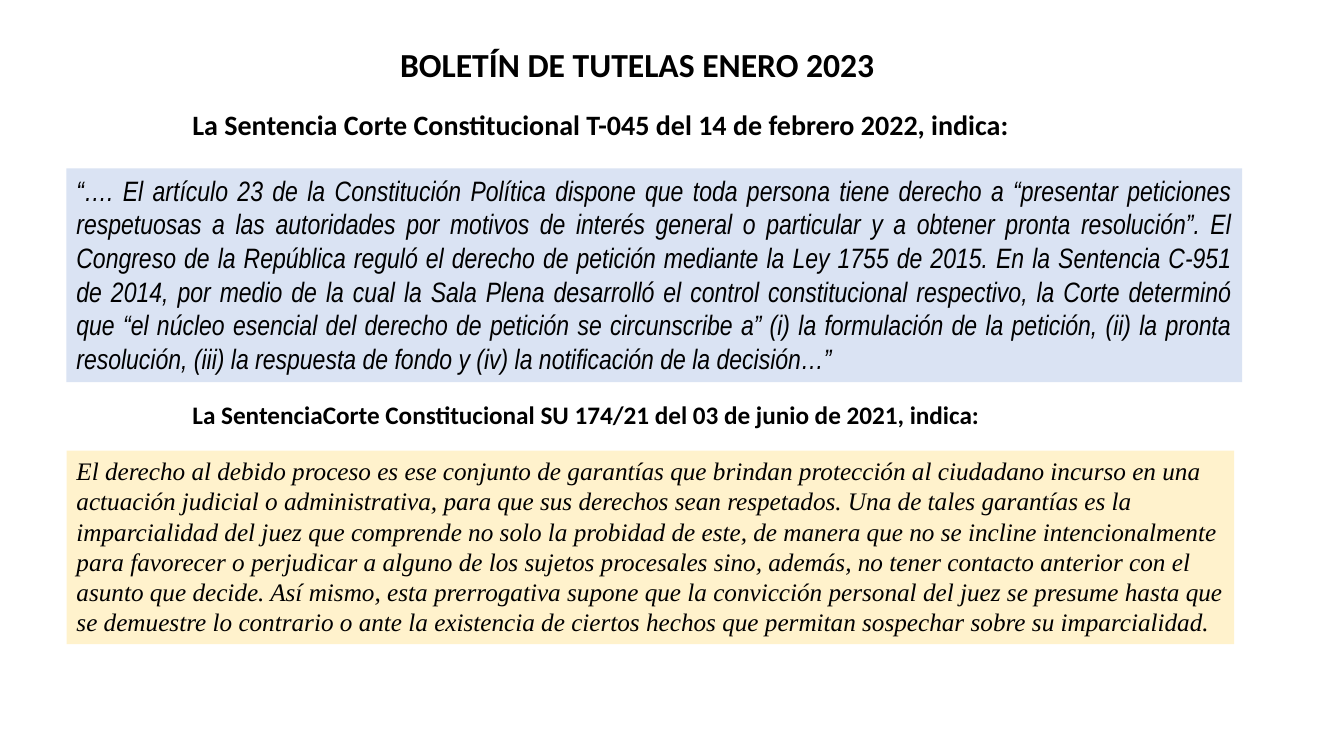
from pptx import Presentation
from pptx.dml.color import RGBColor
from pptx.enum.shapes import MSO_SHAPE
from pptx.enum.text import MSO_ANCHOR, MSO_AUTO_SIZE, PP_ALIGN
from pptx.util import Inches, Pt

PETITION_QUOTE = (
    "“…. El artículo 23 de la Constitución Política dispone que toda persona tiene derecho a "
    "“presentar peticiones respetuosas a las autoridades por motivos de interés general o "
    "particular y a obtener pronta resolución”. El Congreso de la República reguló el derecho "
    "de petición mediante la Ley 1755 de 2015. En la Sentencia C-951 de 2014, por medio de la "
    "cual la Sala Plena desarrolló el control constitucional respectivo, la Corte determinó que "
    "“el núcleo esencial del derecho de petición se circunscribe a” (i) la formulación de la "
    "petición, (ii) la pronta resolución, (iii) la respuesta de fondo y (iv) la notificación de "
    "la decisión…”"
)
DUE_PROCESS_QUOTE = (
    "El derecho al debido proceso es ese conjunto de garantías que brindan protección al "
    "ciudadano incurso en una actuación judicial o administrativa, para que sus derechos sean "
    "respetados. Una de tales garantías es la imparcialidad del juez que comprende no solo la "
    "probidad de este, de manera que no se incline intencionalmente para favorecer o perjudicar "
    "a alguno de los sujetos procesales sino, además, no tener contacto anterior con el asunto "
    "que decide. Así mismo, esta prerrogativa supone que la convicción personal del juez se "
    "presume hasta que se demuestre lo contrario o ante la existencia de ciertos hechos que "
    "permitan sospechar sobre su imparcialidad."
)


def color(hex_value):
    return RGBColor.from_string(hex_value)


def write(holder, text, font_name, size, align=PP_ALIGN.LEFT, wrap=True, bold=False, italic=False):
    frame = holder.text_frame
    frame.word_wrap = wrap
    frame.auto_size = MSO_AUTO_SIZE.SHAPE_TO_FIT_TEXT
    frame.vertical_anchor = MSO_ANCHOR.TOP
    paragraph = frame.paragraphs[0]
    paragraph.text = text
    paragraph.alignment = align
    font = paragraph.font
    font.name = font_name
    font.size = Pt(size)
    font.bold = bold
    font.italic = italic
    font.color.rgb = color("000000")


def add_heading(slide, text, left, top, width, height, size, wrap=True):
    heading = slide.shapes.add_textbox(Inches(left), Inches(top), Inches(width), Inches(height))
    write(heading, text, "Calibri", size, wrap=wrap, bold=True)


def add_quote(slide, text, top, width, height, fill, font_name, size, align=PP_ALIGN.LEFT):
    panel = slide.shapes.add_shape(
        MSO_SHAPE.RECTANGLE, Inches(0.66), Inches(top), Inches(width), Inches(height)
    )
    panel.shadow.inherit = False
    panel.fill.solid()
    panel.fill.fore_color.rgb = color(fill)
    panel.line.fill.background()
    write(panel, text, font_name, size, align=align, italic=True)


def main():
    deck = Presentation()
    deck.slide_width = Inches(13.33)
    deck.slide_height = Inches(7.5)
    slide = deck.slides.add_slide(deck.slide_layouts[6])

    add_heading(slide, "BOLETÍN DE TUTELAS ENERO 2023", 3.87, 0.39, 4.95, 0.5, 24, wrap=False)
    add_heading(
        slide, "La Sentencia Corte Constitucional T-045 del 14 de febrero 2022, indica:",
        1.81, 1.02, 10.06, 0.44, 20,
    )
    add_quote(
        slide, PETITION_QUOTE, 1.67, 11.66, 2.12, "DAE3F3", "Arial Narrow", 20, PP_ALIGN.JUSTIFY
    )
    add_heading(
        slide, "La SentenciaCorte Constitucional SU 174/21 del 03 de junio de 2021, indica:",
        1.81, 3.91, 10.38, 0.4, 18,
    )
    add_quote(slide, DUE_PROCESS_QUOTE, 4.47, 11.58, 1.92, "FFF2CC", "Times New Roman", 18)

    deck.save("out.pptx")


if __name__ == "__main__":
    main()
